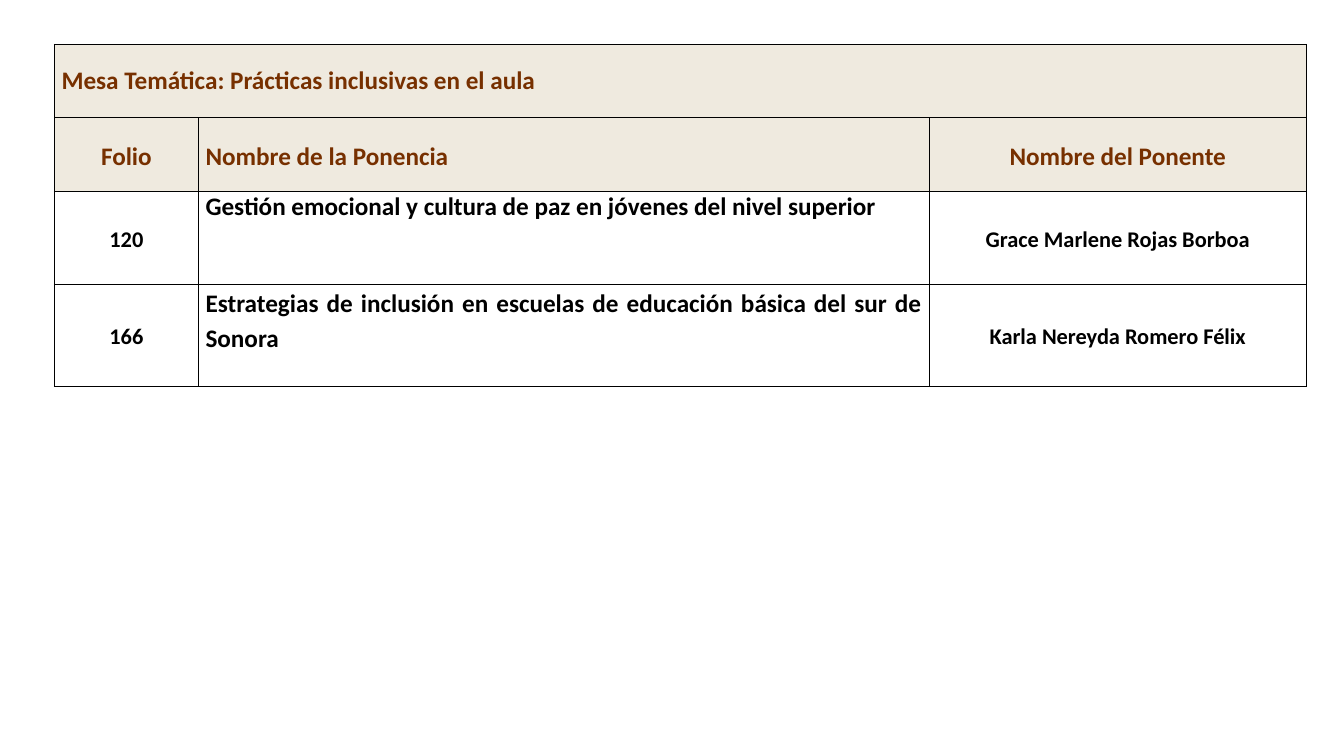
import pptx
import pptx.dml.color
import pptx.enum.text
import pptx.oxml
import pptx.oxml.ns
import pptx.util
from dataclasses import dataclass

Cm = pptx.util.Cm
Pt = pptx.util.Pt
RGB = pptx.dml.color.RGBColor.from_string
ALIGN = pptx.enum.text.PP_ALIGN
ANCHOR = pptx.enum.text.MSO_ANCHOR

# Content
SESSION = "Mesa Temática: Prácticas inclusivas en el aula"
HEADINGS = ("Folio", "Nombre de la Ponencia", "Nombre del Ponente")
TALKS = [
    ("120", "Gestión emocional y cultura de paz en jóvenes del nivel superior",
     "Grace Marlene Rojas Borboa"),
    ("166", "Estrategias de inclusión en escuelas de educación básica del sur de Sonora",
     "Karla Nereyda Romero Félix"),
]


@dataclass(frozen=True)
class Theme:
    font: str = "Calibri"
    heading: str = "773000"
    text: str = "000000"
    header_fill: str = "EFEADF"
    border: str = "000000"
    large: int = 18
    small: int = 16
    border_width: int = 1


THEME = Theme()

# Layout
LEFT, TOP = Cm(1.37), Cm(1.12)
COLUMN_WIDTHS = [Cm(3.63), Cm(18.42), Cm(9.5)]
ROW_HEIGHTS = [Cm(1.85), Cm(1.85), Cm(2.34), Cm(2.57)]
COLUMN_ALIGNMENTS = (ALIGN.CENTER, ALIGN.JUSTIFY, ALIGN.CENTER)
CELL_FORMAT = {"margin_left": Cm(0.18), "margin_right": Cm(0.18),
               "margin_top": 0, "margin_bottom": 0}


def set_all(target, values):
    for name, value in values.items():
        setattr(target, name, value)


def add_borders(cell):
    properties = cell._tc.get_or_add_tcPr()
    for side in ("lnL", "lnR", "lnT", "lnB"):
        properties.append(pptx.oxml.parse_xml(
            f'<a:{side} {pptx.oxml.ns.nsdecls("a")} w="{Pt(THEME.border_width)}">'
            f'<a:solidFill><a:srgbClr val="{THEME.border}"/></a:solidFill></a:{side}>'))


def write_cell(cell, text, alignment, size, color, spacing, anchor=ANCHOR.MIDDLE):
    set_all(cell, {**CELL_FORMAT, "vertical_anchor": anchor})
    paragraph = cell.text_frame.paragraphs[0]
    set_all(paragraph, {"alignment": alignment, "line_spacing": spacing})
    run = paragraph.add_run()
    run.text = text
    set_all(run.font, {"name": THEME.font, "size": Pt(size), "bold": True})
    run.font.color.rgb = RGB(color)


def main():
    presentation = pptx.Presentation()
    set_all(presentation, {"slide_width": Cm(33.87), "slide_height": Cm(19.05)})
    slide = presentation.slides.add_slide(presentation.slide_layouts[6])

    # Table grid
    table = slide.shapes.add_table(
        len(ROW_HEIGHTS), len(COLUMN_WIDTHS), LEFT, TOP,
        sum(COLUMN_WIDTHS), sum(ROW_HEIGHTS)).table
    set_all(table, {"first_row": False, "horz_banding": False})
    for column, width in zip(table.columns, COLUMN_WIDTHS):
        column.width = width
    for row_index, (row, height) in enumerate(zip(table.rows, ROW_HEIGHTS)):
        row.height = height
        for cell in row.cells:
            add_borders(cell)
            if row_index < 2:
                cell.fill.solid()
                cell.fill.fore_color.rgb = RGB(THEME.header_fill)
            else:
                cell.fill.background()

    # Session title and column headings
    table.cell(0, 0).merge(table.cell(0, 2))
    write_cell(table.cell(0, 0), SESSION, ALIGN.JUSTIFY, THEME.large, THEME.heading, 1.0)
    for column, heading in enumerate(HEADINGS):
        write_cell(table.cell(1, column), heading, COLUMN_ALIGNMENTS[column],
                   THEME.large, THEME.heading, 1.15)

    # Talks
    for row, talk in enumerate(TALKS, start=2):
        for column, text in enumerate(talk):
            is_title = column == 1
            write_cell(table.cell(row, column), text, COLUMN_ALIGNMENTS[column],
                       THEME.large if is_title else THEME.small, THEME.text,
                       1.0 if is_title and row == 2 else 1.14,
                       ANCHOR.TOP if is_title else ANCHOR.MIDDLE)

    presentation.save("out.pptx")


if __name__ == "__main__":
    main()
